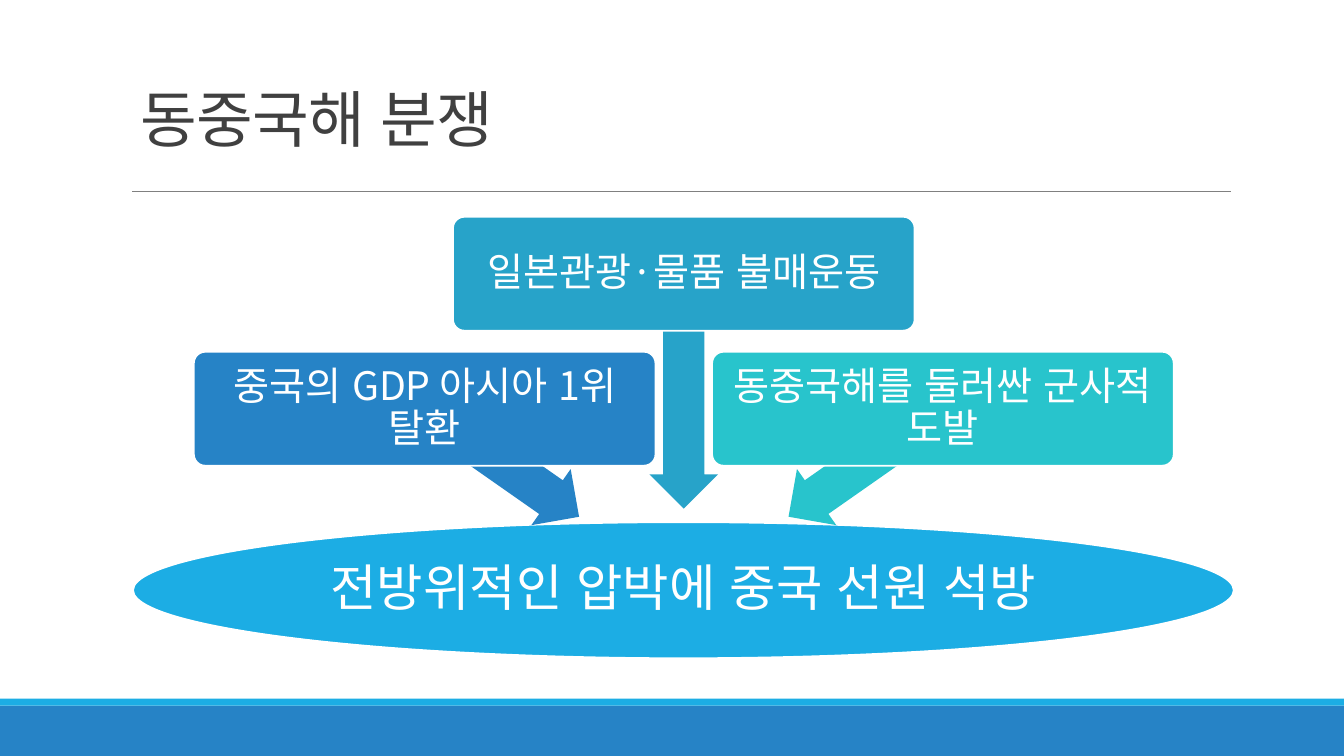
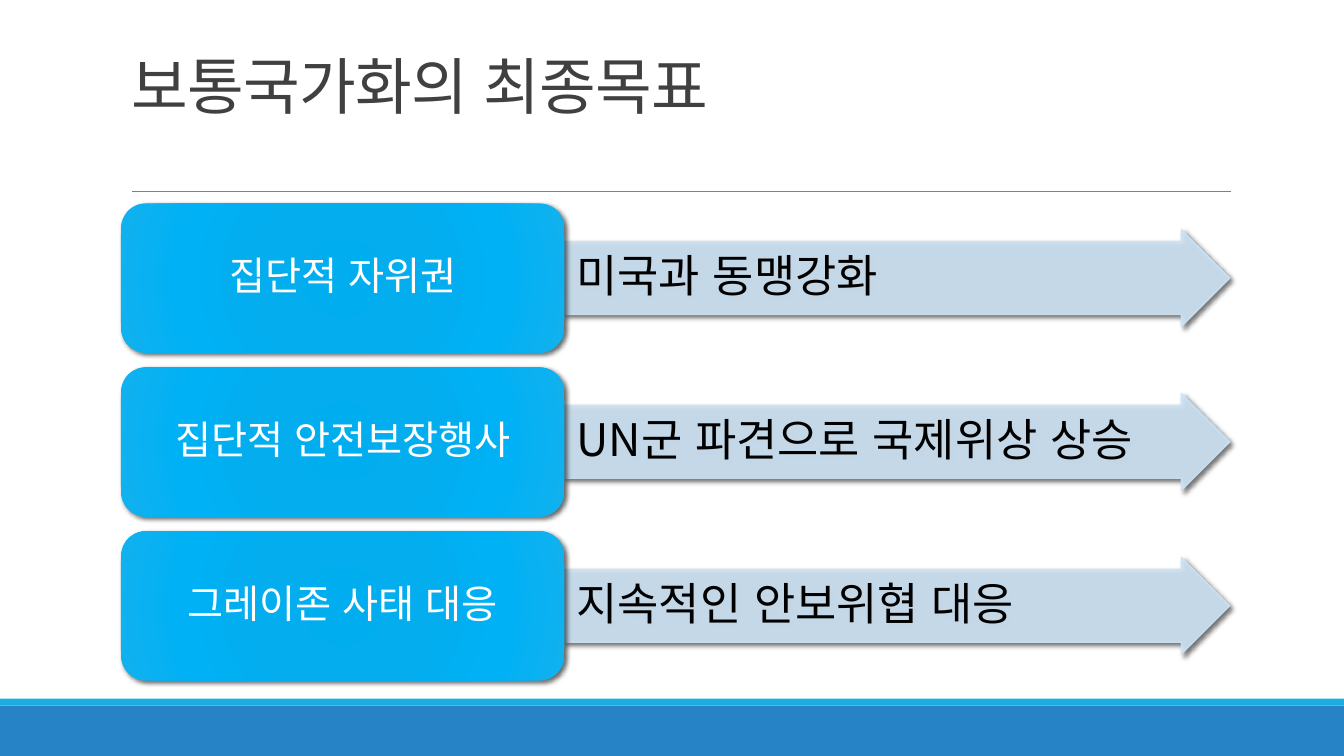
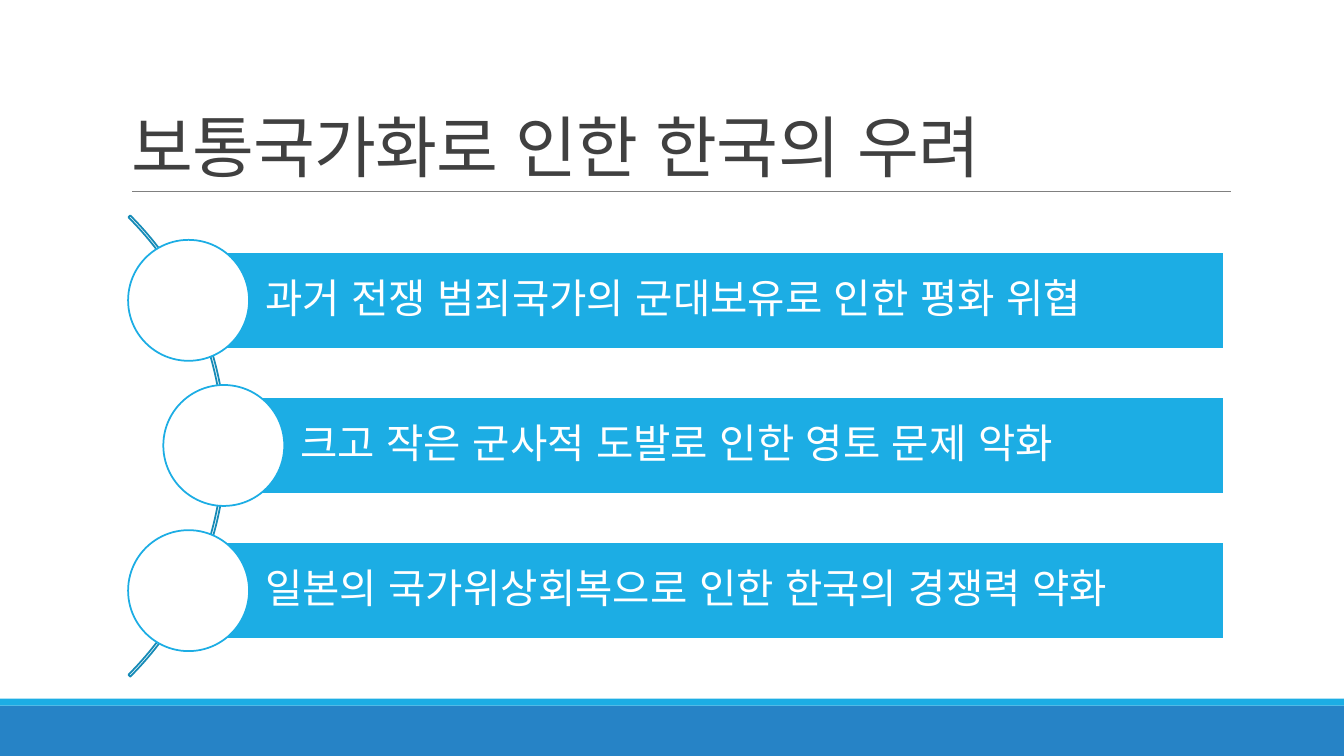
from dataclasses import dataclass
from typing import Any, NamedTuple

from lxml import etree
from pptx import Presentation
from pptx.dml.color import RGBColor
from pptx.enum.shapes import MSO_CONNECTOR, MSO_SHAPE
from pptx.enum.text import MSO_ANCHOR, MSO_AUTO_SIZE, PP_ALIGN
from pptx.oxml import parse_xml
from pptx.oxml.ns import nsdecls, qn
from pptx.util import Inches, Pt

RECTANGLE = MSO_SHAPE.RECTANGLE
ROUNDED = MSO_SHAPE.ROUNDED_RECTANGLE
ELLIPSE = MSO_SHAPE.OVAL
LEFT_ARROW = MSO_SHAPE.LEFT_ARROW
RIGHT_ARROW = MSO_SHAPE.RIGHT_ARROW
BLOCK_ARC = MSO_SHAPE.BLOCK_ARC
STRAIGHT = MSO_CONNECTOR.STRAIGHT
MIDDLE, BOTTOM = MSO_ANCHOR.MIDDLE, MSO_ANCHOR.BOTTOM
LEFT, CENTER = PP_ALIGN.LEFT, PP_ALIGN.CENTER
NO_AUTOFIT = MSO_AUTO_SIZE.NONE

SLIDE_WIDTH, SLIDE_HEIGHT = Inches(13.33), Inches(7.5)
TITLE_ONLY = 5


@dataclass(frozen=True)
class Theme:
    font: str = "Noto Sans CJK KR"
    accent: str = "1CADE4"
    blue: str = "2683C6"
    teal: str = "27A3C9"
    turquoise: str = "28C4CC"
    arc: str = "168BB7"
    pale: str = "CDE3F5"
    rule: str = "808080"
    heading: str = "404040"
    white: str = "FFFFFF"
    black: str = "000000"
    glow: tuple[tuple[int, str], ...] = (
        (0, "00ADEF"), (34, "03ADEE"), (70, "00B1F5"), (100, "12B1EE"))
    title_size: int = 44
    wide_title_size: int = 48
    result_size: int = 36
    effect_size: int = 32
    bar_size: int = 29
    label_size: int = 28
    outline: float = 1.25
    hairline: float = 0.5


THEME = Theme()


class Frame(NamedTuple):
    """Left, top, width and height in percent of the slide."""
    left: float
    top: float
    width: float
    height: float

    def lengths(self) -> tuple[int, int, int, int]:
        return (share(self.left, SLIDE_WIDTH), share(self.top, SLIDE_HEIGHT),
                share(self.width, SLIDE_WIDTH), share(self.height, SLIDE_HEIGHT))


@dataclass(frozen=True)
class Label:
    text: str
    size: float
    color: str = THEME.white
    align: Any = CENTER
    anchor: Any = MIDDLE
    insets: tuple[float, float, float, float] = (0.06, 0.06, 0.06, 0.06)
    line_spacing: float = 0.9
    tracking: int = 0


@dataclass(frozen=True)
class Look:
    fill: str | None = None
    line: str | None = None
    line_width: float = THEME.outline
    opacity: int = 100
    glow: bool = False
    shadow_blur: float = 0
    adjustments: tuple[float, ...] = ()
    rotation: float = 0


@dataclass(frozen=True)
class Pressure:
    text: str
    color: str
    side: int
    top: float
    arrow_top: float
    arrow_width: float
    angle: float


class Goal(NamedTuple):
    name: str
    effect: str


class Concern(NamedTuple):
    text: str
    left: float


def share(percent: float, whole: int) -> int:
    return round(whole * percent / 100)


def apply(target: Any, values: dict[str, Any]) -> None:
    for name, value in values.items():
        setattr(target, name, value)


def write(box: Any, label: Label) -> None:
    frame = box.text_frame
    sides = ("margin_left", "margin_top", "margin_right", "margin_bottom")
    apply(frame, {
        "word_wrap": True, "auto_size": NO_AUTOFIT,
        "vertical_anchor": label.anchor,
        **{side: Inches(inset) for side, inset in zip(sides, label.insets)}})
    para = frame.paragraphs[0]
    apply(para, {"alignment": label.align, "line_spacing": label.line_spacing})
    span = para.add_run()
    span.text = label.text
    apply(span.font, {"size": Pt(label.size), "name": THEME.font})
    span.font.color.rgb = RGBColor.from_string(label.color)
    for properties in box.element.iter(qn("a:rPr")):
        properties.set("lang", "ko-KR")
        properties.set("spc", str(label.tracking))
        etree.SubElement(properties, qn("a:ea"), typeface=THEME.font)


def add_glow(shape: Any) -> None:
    stops = "".join(
        f'<a:gs pos="{place * 1000}"><a:srgbClr val="{color}"/></a:gs>'
        for place, color in THEME.glow)
    gradient = parse_xml(
        f'<a:gradFill {nsdecls("a")} rotWithShape="1"><a:gsLst>{stops}</a:gsLst>'
        '<a:path path="circle"><a:fillToRect l="100000" t="100000" '
        'r="100000" b="100000"/></a:path></a:gradFill>')
    shape.element.spPr.find(qn("a:prstGeom")).addnext(gradient)


def add_shadow(shape: Any, blur: float) -> None:
    shape.element.spPr.find(qn("a:effectLst")).append(parse_xml(
        f'<a:outerShdw {nsdecls("a")} blurRad="{Pt(blur)}" dist="{Pt(2)}" '
        'dir="2700000" algn="br" rotWithShape="0">'
        f'<a:srgbClr val="{THEME.black}"><a:alpha val="60000"/></a:srgbClr>'
        '</a:outerShdw>'))


def add_box(page: Any, kind: Any, frame: Frame, look: Look,
            label: Label | None = None) -> Any:
    shape = page.shapes.add_shape(kind, *frame.lengths())
    shape.shadow.inherit = False
    shape.rotation = look.rotation
    for index, value in enumerate(look.adjustments):
        shape.adjustments[index] = value
    if look.glow:
        add_glow(shape)
    elif look.fill:
        shape.fill.solid()
        shape.fill.fore_color.rgb = RGBColor.from_string(look.fill)
    else:
        shape.fill.background()
    if look.line:
        shape.line.color.rgb = RGBColor.from_string(look.line)
        shape.line.width = Pt(look.line_width)
    else:
        shape.line.fill.background()
    if look.opacity < 100:
        for color in shape.element.spPr.iter(qn("a:srgbClr")):
            etree.SubElement(color, qn("a:alpha"), val=str(look.opacity * 1000))
    if look.shadow_blur:
        add_shadow(shape, look.shadow_blur)
    if label:
        write(shape, label)
    return shape


def add_rule(page: Any) -> Any:
    left, right = share(9.83, SLIDE_WIDTH), share(91.58, SLIDE_WIDTH)
    height = share(25.33, SLIDE_HEIGHT)
    rule = page.shapes.add_connector(STRAIGHT, left, height, right, height)
    rule.line.color.rgb = RGBColor.from_string(THEME.rule)
    rule.line.width = Pt(THEME.hairline)
    etree.SubElement(rule.element.spPr, qn("a:effectLst"))
    return rule


def furnish_layout(layout: Any, page: Any) -> None:
    parts = [
        add_box(page, RECTANGLE, Frame(0, 93.33, 100, 6.67), Look(THEME.blue)),
        add_box(page, RECTANGLE, Frame(0, 92.4, 100, 0.93), Look(THEME.accent)),
        add_rule(page)]
    for number, part in enumerate(parts, start=100):
        for properties in part.element.iter(qn("p:cNvPr")):
            properties.set("id", str(number))
        layout.shapes.element.append(part.element)


def add_title(page: Any, text: str, frame: Frame,
              size: float = THEME.title_size) -> None:
    title = page.shapes.title
    apply(title, dict(zip(("left", "top", "width", "height"), frame.lengths())))
    write(title, Label(text, size, THEME.heading, LEFT, BOTTOM,
                       (0.1, 0.05, 0.1, 0.05), 0.85, -50))


def draw_dispute(page: Any) -> None:
    add_title(page, "동중국해 분쟁", Frame(9.68, 7.2, 70, 14))
    middle, box_width, box_height, arrow_height = 50.88, 34.35, 15.07, 9.07
    box_step, arrow_step = 19.28, 13.54
    add_box(page, ELLIPSE, Frame(9.9, 69.07, 81.9, 18),
            Look(THEME.accent, THEME.white),
            Label("전방위적인 압박에 중국 선원 석방", THEME.result_size,
                  insets=(0.03,) * 4))
    pressures = (
        Pressure("중국의 GDP 아시아 1위 탈환", THEME.blue, -1, 46.53, 56.67, 14.03, 215),
        Pressure("일본관광·물품 불매운동", THEME.teal, 0, 28.67, 47.2, 17.48, 270),
        Pressure("동중국해를 둘러싼 군사적 도발", THEME.turquoise, 1, 46.53, 56.67,
                 14.03, 325))
    for item in pressures:
        arrow_left = middle + item.side * arrow_step - item.arrow_width / 2
        add_box(page, LEFT_ARROW,
                Frame(arrow_left, item.arrow_top, item.arrow_width, arrow_height),
                Look(item.color, adjustments=(0.6, 0.5), rotation=item.angle))
        box_left = middle + item.side * box_step - box_width / 2
        add_box(page, ROUNDED, Frame(box_left, item.top, box_width, box_height),
                Look(item.color, THEME.white, adjustments=(0.1,)),
                Label(item.text, THEME.label_size))


def draw_goals(page: Any) -> None:
    add_title(page, "보통국가화의 최종목표", Frame(9, 4.13, 82.5, 12.67))
    goals = (Goal("집단적 자위권", "미국과 동맹강화"),
             Goal("집단적 안전보장행사", "UN군 파견으로 국제위상 상승"),
             Goal("그레이존 사태 대응", "지속적인 안보위협 대응"))
    first, pitch, name_height, arrow_height = 26.93, 21.67, 19.73, 12.8
    for row, goal in enumerate(goals):
        top = first + row * pitch
        arrow_top = top + (name_height - arrow_height) / 2
        add_box(page, RIGHT_ARROW, Frame(42, arrow_top, 49.5, arrow_height),
                Look(THEME.pale, THEME.pale, 1, opacity=90, shadow_blur=3,
                     adjustments=(0.75, 0.5)),
                Label(goal.effect, THEME.effect_size, THEME.black, LEFT,
                      insets=(0.12, 0.02, 0.02, 0.02)))
        add_box(page, ROUNDED, Frame(9, top, 33, name_height),
                Look(glow=True, shadow_blur=3.5),
                Label(goal.name, THEME.label_size,
                      insets=(0.12, 0.06, 0.12, 0.06)))


def draw_concerns(page: Any) -> None:
    add_title(page, "보통국가화로 인한 한국의 우려", Frame(9, 13.2, 82.5, 12.13),
              THEME.wide_title_size)
    add_box(page, BLOCK_ARC, Frame(-31.73, 15.87, 48.53, 86.27),
            Look(line=THEME.arc, adjustments=(189, 27, 0.004)))
    concerns = (
        Concern("과거 전쟁 범죄국가의 군대보유로 인한 평화 위협", 9.53),
        Concern("크고 작은 군사적 도발로 인한 영토 문제 악화", 12.15),
        Concern("일본의 국가위상회복으로 인한 한국의 경쟁력 약화", 9.53))
    first, pitch, right = 31.73, 19.2, 91.05
    circle_width, circle_height, bar_height = 9, 16, 12.8
    for row, concern in enumerate(concerns):
        top = first + row * pitch
        bar_left = concern.left + circle_width / 2
        bar_top = top + (circle_height - bar_height) / 2
        add_box(page, RECTANGLE,
                Frame(bar_left, bar_top, right - bar_left, bar_height),
                Look(THEME.accent, THEME.white),
                Label(concern.text, THEME.bar_size, align=LEFT,
                      insets=(0.76, 0.08, 0.08, 0.08)))
        add_box(page, ELLIPSE,
                Frame(concern.left, top, circle_width, circle_height),
                Look(THEME.white, THEME.accent))


def main() -> None:
    deck = Presentation()
    apply(deck, {"slide_width": SLIDE_WIDTH, "slide_height": SLIDE_HEIGHT})
    layout = deck.slide_layouts[TITLE_ONLY]
    drawings = (draw_dispute, draw_goals, draw_concerns)
    pages = [deck.slides.add_slide(layout) for _ in drawings]
    furnish_layout(layout, pages[0])
    for draw, page in zip(drawings, pages):
        draw(page)
    deck.save("out.pptx")


if __name__ == "__main__":
    main()
